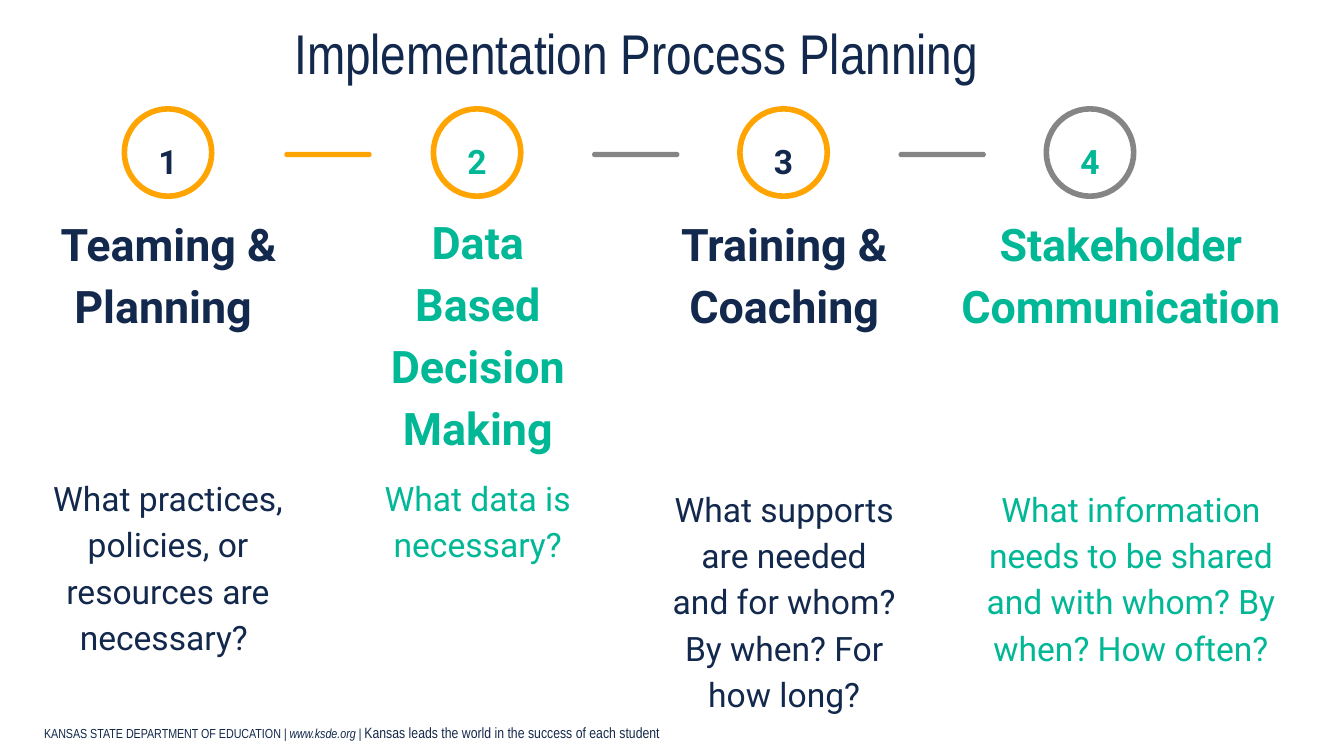
from dataclasses import dataclass

from pptx import Presentation
from pptx.dml.color import RGBColor
from pptx.enum.shapes import MSO_SHAPE
from pptx.enum.text import MSO_ANCHOR, PP_ALIGN
from pptx.util import Inches, Pt

OVAL, BAR = MSO_SHAPE.OVAL, MSO_SHAPE.ROUNDED_RECTANGLE
TOP, BOTTOM = MSO_ANCHOR.TOP, MSO_ANCHOR.BOTTOM
LEFT, CENTER = PP_ALIGN.LEFT, PP_ALIGN.CENTER


@dataclass(frozen=True)
class Theme:
    navy: str = "12284C"
    footer_navy: str = "15284B"
    green: str = "00B796"
    orange: str = "FFA400"
    gray: str = "858585"
    title_font: str = "Arial Narrow"
    body_font: str = "Roboto"
    title_size: int = 30
    heading_size: int = 24
    body_size: int = 18
    footer_size: int = 7
    motto_size: int = 8


THEME = Theme()

TITLE = "Implementation Process Planning"
FOOTER = [
    ("KANSAS STATE DEPARTMENT OF EDUCATION ", THEME.footer_size, THEME.navy, False),
    ("| www.ksde.org | ", THEME.footer_size, THEME.navy, True),
    ("Kansas leads the world in the success of each student",
     THEME.motto_size, THEME.footer_navy, False),
]
STEPS = [
    dict(heading="Teaming & Planning ",
         question="What practices, policies, or resources are necessary? ",
         center=1.25, color=THEME.navy, ring=THEME.orange,
         heading_at=(0.32, 2.08, 1.87), question_at=(0.29, 3.41, 1.92)),
    dict(heading="Data Based Decision Making",
         question="What data is necessary?",
         center=3.55, color=THEME.green, ring=THEME.orange,
         heading_at=(2.62, 2.99, 1.87), question_at=(2.62, 3.41, 1.87)),
    dict(heading="Training & Coaching",
         question="What supports are needed and for whom? By when? For how long?",
         center=5.83, color=THEME.navy, ring=THEME.orange,
         heading_at=(4.9, 2.08, 1.87), question_at=(4.9, 3.49, 1.87)),
    dict(heading="Stakeholder Communication",
         question="What information needs to be shared and with whom? By when? How often?",
         center=8.11, color=THEME.green, ring=THEME.gray,
         heading_at=(7.01, 2.08, 2.66), question_at=(7.17, 3.49, 2.49)),
]
BAR_COLORS = [THEME.orange, THEME.gray, THEME.gray]
PAGE_WIDTH = 10
PAGE_HEIGHT = PAGE_WIDTH * 9 / 16
RING_SIZE, RING_TOP = 0.65, 0.81
NUMBER_WIDTH, NUMBER_TOP, NUMBER_HEIGHT = 0.48, 0.9, 0.35
HEADING_HEIGHT, QUESTION_HEIGHT = 0.49, 0.81
BAR_WIDTH, BAR_TOP, BAR_HEIGHT = 0.65, 1.13, 0.04
BAR_SHIFT = 0.04


def rgb(value):
    return RGBColor.from_string(value)


def add_text(shapes, at, spans, font, align=CENTER, anchor=TOP, inset=0.1,
             line=None, after=None):
    box = shapes.add_textbox(*map(Inches, at))
    frame = box.text_frame
    frame.word_wrap = True
    frame.vertical_anchor = anchor
    frame.margin_left = frame.margin_right = Inches(0.1)
    frame.margin_top = frame.margin_bottom = Inches(inset)
    para = frame.paragraphs[0]
    para.alignment = align
    if line:
        para.line_spacing = line
    if after:
        para.space_after = Pt(after)
    for text, size, color, bold, italic in spans:
        span = para.add_run()
        span.text = text
        span.font.name = font
        span.font.size = Pt(size)
        span.font.color.rgb = rgb(color)
        span.font.bold = bold
        span.font.italic = italic


def add_bar(shapes, center, color):
    bar = shapes.add_shape(BAR, Inches(center - BAR_WIDTH / 2), Inches(BAR_TOP),
                           Inches(BAR_WIDTH), Inches(BAR_HEIGHT))
    bar.adjustments[0] = 0.5
    bar.shadow.inherit = False
    bar.fill.solid()
    bar.fill.fore_color.rgb = rgb(color)
    bar.line.fill.background()


def add_step(page, number, step):
    shapes = page.shapes.add_group_shape().shapes
    center, color = step["center"], step["color"]
    ring = shapes.add_shape(OVAL, Inches(center - RING_SIZE / 2), Inches(RING_TOP),
                            Inches(RING_SIZE), Inches(RING_SIZE))
    ring.shadow.inherit = False
    ring.fill.background()
    ring.line.color.rgb = rgb(step["ring"])
    ring.line.width = Pt(3)
    number_at = (center - NUMBER_WIDTH / 2, NUMBER_TOP, NUMBER_WIDTH, NUMBER_HEIGHT)
    add_text(shapes, number_at, [(str(number), THEME.body_size, color, True, False)],
             THEME.body_font, line=1.15, after=16)
    add_text(shapes, (*step["heading_at"], HEADING_HEIGHT),
             [(step["heading"], THEME.heading_size, color, True, False)],
             THEME.body_font, anchor=BOTTOM, line=1.15)
    add_text(shapes, (*step["question_at"], QUESTION_HEIGHT),
             [(step["question"], THEME.body_size, color, False, False)],
             THEME.body_font, line=1.15, after=16)


def main():
    deck = Presentation()
    deck.slide_width, deck.slide_height = Inches(PAGE_WIDTH), Inches(PAGE_HEIGHT)
    page = deck.slides.add_slide(deck.slide_layouts[6])
    add_text(page.shapes, (0.23, 5.33, 6.6, 0.24),
             [(text, size, color, False, italic) for text, size, color, italic in FOOTER],
             THEME.title_font, align=LEFT, anchor=BOTTOM, inset=0.05)
    for number, step in enumerate(STEPS, 1):
        add_step(page, number, step)
    for before, following, color in zip(STEPS, STEPS[1:], BAR_COLORS):
        middle = (before["center"] + following["center"]) / 2
        add_bar(page.shapes, middle + BAR_SHIFT, color)
    add_text(page.shapes, (1.9, 0.04, 5.67, 0.49),
             [(TITLE, THEME.title_size, THEME.navy, False, False)], THEME.title_font)
    deck.save("out.pptx")


if __name__ == "__main__":
    main()
